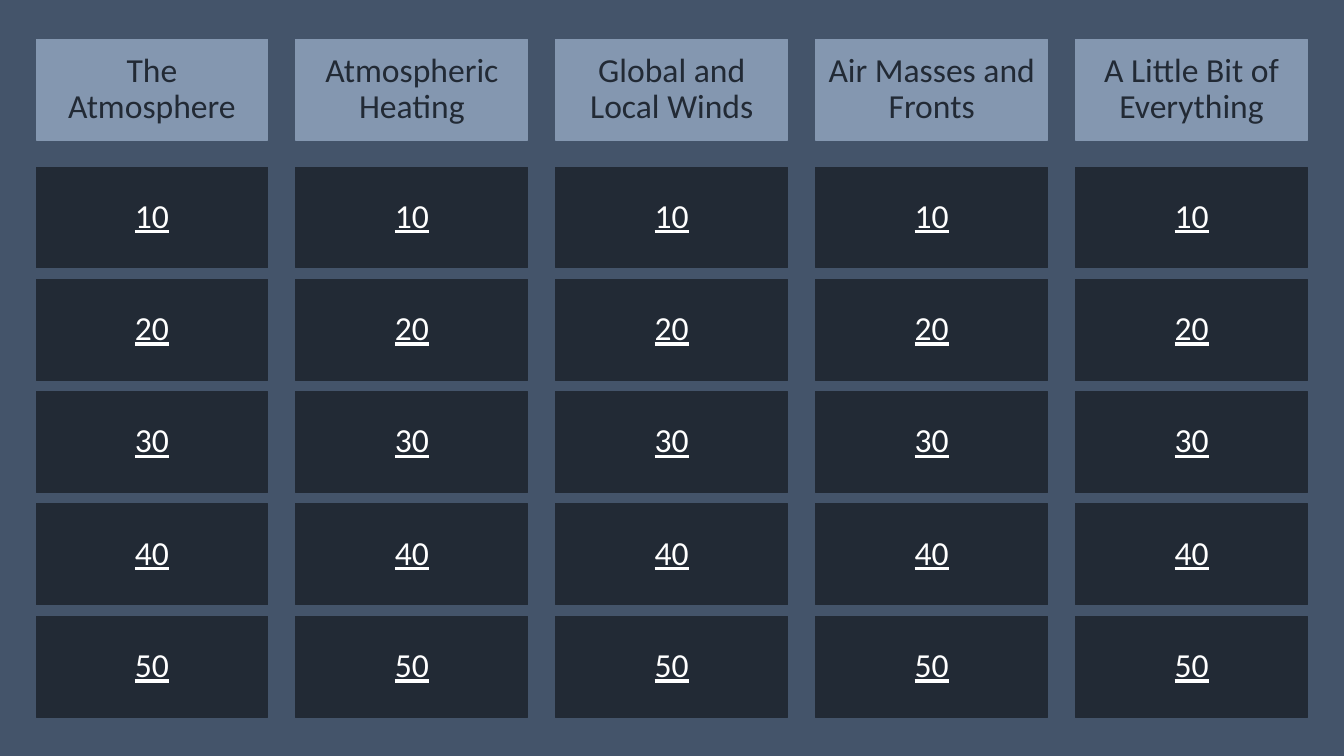
import dataclasses
import pptx
import pptx.dml.color
import pptx.enum.shapes
import pptx.enum.text
import pptx.util

Cm = pptx.util.Cm


def color(code):
    return pptx.dml.color.RGBColor.from_string(code)


@dataclasses.dataclass(frozen=True)
class Theme:
    back: str = "44546A"
    head: str = "8497B0"
    dark: str = "222A35"
    light: str = "FFFFFF"
    font: str = "Calibri"
    size: int = 24
    line: float = 0.75


class Board:
    """Holds the theme and the slide, and draws the tiles of a quiz board."""

    def __init__(self, slide, theme):
        self.slide = slide
        self.theme = theme
        fill = slide.background.fill
        fill.solid()
        fill.fore_color.rgb = color(theme.back)

    def tile(self, left, top, text, fill, ink, under=False):
        box = self.slide.shapes.add_shape(
            pptx.enum.shapes.MSO_SHAPE.RECTANGLE,
            Cm(left), Cm(top), Cm(WIDTH), Cm(HEIGHT))
        box.shadow.inherit = False
        box.fill.solid()
        box.fill.fore_color.rgb = color(fill)
        box.line.color.rgb = color(fill)
        box.line.width = pptx.util.Pt(self.theme.line)
        frame = box.text_frame
        frame.word_wrap = True
        frame.vertical_anchor = pptx.enum.text.MSO_ANCHOR.MIDDLE
        para = frame.paragraphs[0]
        para.alignment = pptx.enum.text.PP_ALIGN.CENTER
        para.line_spacing = 0.9
        run = para.add_run()
        run.text = text
        run.font.name = self.theme.font
        run.font.size = pptx.util.Pt(self.theme.size)
        run.font.color.rgb = color(ink)
        run.font.underline = under

    def topic(self, left, text):
        self.tile(left, HEAD_TOP, text, self.theme.head, self.theme.dark)

    def score(self, left, top, points):
        self.tile(left, top, str(points), self.theme.dark, self.theme.light, True)


WIDTH, HEIGHT = 5.84, 2.54
LEFT, HEAD_TOP, GRID_TOP = 0.91, 0.99, 4.21
COL_STEP, ROW_STEP = 6.55, 2.83
TOPICS = [
    "The Atmosphere",
    "Atmospheric Heating",
    "Global and Local Winds",
    "Air Masses and Fronts",
    "A Little Bit of Everything",
]
POINTS = range(10, 60, 10)


def main():
    deck = pptx.Presentation()
    deck.slide_width = Cm(33.87)
    deck.slide_height = Cm(19.05)
    board = Board(deck.slides.add_slide(deck.slide_layouts[6]), Theme())
    for col, topic in enumerate(TOPICS):
        left = LEFT + col * COL_STEP
        board.topic(left, topic)
        for row, points in enumerate(POINTS):
            board.score(left, GRID_TOP + row * ROW_STEP, points)
    deck.save("out.pptx")


if __name__ == "__main__":
    main()
